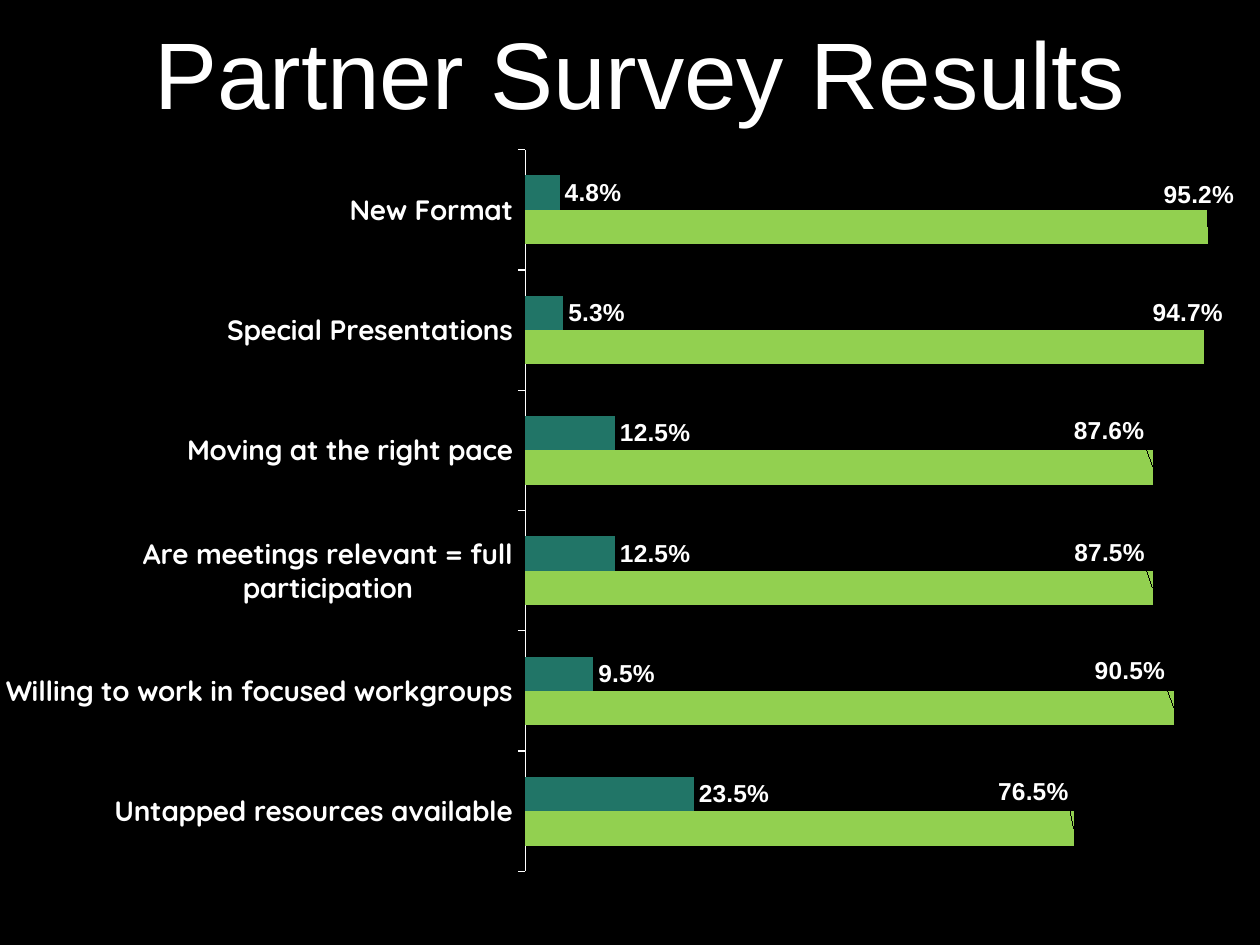
from lxml.etree import SubElement
from pptx import Presentation
from pptx.chart.data import CategoryChartData
from pptx.dml.color import RGBColor
from pptx.enum.chart import XL_CHART_TYPE as ChartType, XL_LABEL_POSITION as LabelPosition
from pptx.enum.chart import XL_TICK_LABEL_POSITION as TickLabels, XL_TICK_MARK as TickMark
from pptx.enum.text import MSO_ANCHOR as Anchor, PP_ALIGN as Align
from pptx.oxml.ns import qn
from pptx.util import Inches, Pt

BLACK = RGBColor(0x00, 0x00, 0x00)
WHITE = RGBColor(0xFF, 0xFF, 0xFF)
GREEN = RGBColor(0x92, 0xD0, 0x50)
TEAL = RGBColor(0x21, 0x75, 0x67)

PERCENT = "0.0%"
# Question, Series 1 value, Series 2 value, Series 1 label shift (x, y) in percent of the chart
RESULTS = [
    ("Untapped resources available", 0.765, 0.235, (-6.4, -4.9)),
    ("Willing to work in focused workgroups", 0.905, 0.095, (-6.7, -4.9)),
    ("Are meetings relevant = full participation", 0.875, 0.125, (-6.6, -4.6)),
    ("Moving at the right pace", 0.876, 0.125, (-6.7, -4.9)),
    ("Special Presentations", 0.947, 0.053, (-4.5, -4.6)),
    ("New Format", 0.952, 0.048, (-3.9, -4.2)),
]


def format_font(font, size, bold=False, name="Arial", color=WHITE):
    font.size = Pt(size)
    font.bold = bold
    font.name = name
    font.color.rgb = color


def add_text(page, text, left, top, width, height, size, align=Align.CENTER, anchor=Anchor.BOTTOM):
    box = page.shapes.add_textbox(Inches(left), Inches(top), Inches(width), Inches(height))
    frame = box.text_frame
    frame.word_wrap = True
    frame.vertical_anchor = anchor
    para = frame.paragraphs[0]
    para.alignment = align
    span = para.add_run()
    span.text = text
    format_font(span.font, size)


def set_layout(parent, index, **settings):
    """Put a manual chart layout into parent as its child number index."""
    for old in parent.findall(qn("c:layout")):
        parent.remove(old)
    layout = SubElement(parent, qn("c:layout"))
    parent.insert(index, layout)
    manual = SubElement(layout, qn("c:manualLayout"))
    for tag, value in settings.items():
        SubElement(manual, qn(f"c:{tag}")).set("val", str(value))


def format_series(series, color):
    series.format.fill.solid()
    series.format.fill.fore_color.rgb = color
    series.invert_if_negative = False
    labels = series.data_labels
    labels.show_value = True
    labels.number_format = PERCENT
    labels.number_format_is_linked = False
    labels.position = LabelPosition.OUTSIDE_END
    format_font(labels.font, 14, bold=True)


def shift_labels(series, shifts):
    for index, (x, y) in enumerate(shifts):
        label = series.points[index].data_label
        format_font(label.font, 14, bold=True)
        label.position = LabelPosition.OUTSIDE_END
        element = series.data_labels._element.findall(qn("c:dLbl"))[index]
        set_layout(element, 1, x=round(x / 100, 3), y=round(y / 100, 3))


def format_axes(chart):
    questions = chart.category_axis
    questions.major_tick_mark = TickMark.OUTSIDE
    questions.minor_tick_mark = TickMark.NONE
    questions.tick_label_position = TickLabels.LOW
    questions.has_major_gridlines = False
    questions.format.line.color.rgb = WHITE
    questions.format.line.width = Pt(0.75)
    format_font(questions.tick_labels.font, 16, bold=True, name="Quicksand")

    shares = chart.value_axis
    shares.minimum_scale = 0
    shares.maximum_scale = 1
    shares.has_major_gridlines = False
    shares.tick_labels.number_format = PERCENT
    shares.tick_labels.number_format_is_linked = False
    shares.visible = False


def add_results_chart(page, left, top, width, height):
    questions, first, second, shifts = zip(*RESULTS)
    data = CategoryChartData(number_format=PERCENT)
    data.categories = questions
    data.add_series("Series 1", first)
    data.add_series("Series 2", second)
    chart = page.shapes.add_chart(ChartType.BAR_CLUSTERED, Inches(left), Inches(top),
                                  Inches(width), Inches(height), data).chart
    chart.has_legend = False
    chart.has_title = False
    format_font(chart.font, 10)

    plot = chart.plots[0]
    plot.gap_width = 150
    plot.overlap = 0
    plot.vary_by_categories = False
    for series, color in zip(plot.series, (GREEN, TEAL)):
        format_series(series, color)
    shift_labels(plot.series[0], shifts)
    format_axes(chart)
    plot_area = chart._chartSpace.find(f"{qn('c:chart')}/{qn('c:plotArea')}")
    set_layout(plot_area, 0, layoutTarget="inner", xMode="edge", yMode="edge",
               x=0.417, y=0.018, w=0.569, h=0.955)


def main():
    deck = Presentation()
    deck.slide_width = Inches(10)
    deck.slide_height = Inches(7.5)
    page = deck.slides.add_slide(deck.slide_layouts[6])
    page.background.fill.solid()
    page.background.fill.fore_color.rgb = BLACK
    add_text(page, "Partner Survey Results", 0.83, 0, 8.5, 1.07, size=54)
    add_results_chart(page, 0, 1.08, 10, 6)
    deck.save("out.pptx")


if __name__ == "__main__":
    main()
